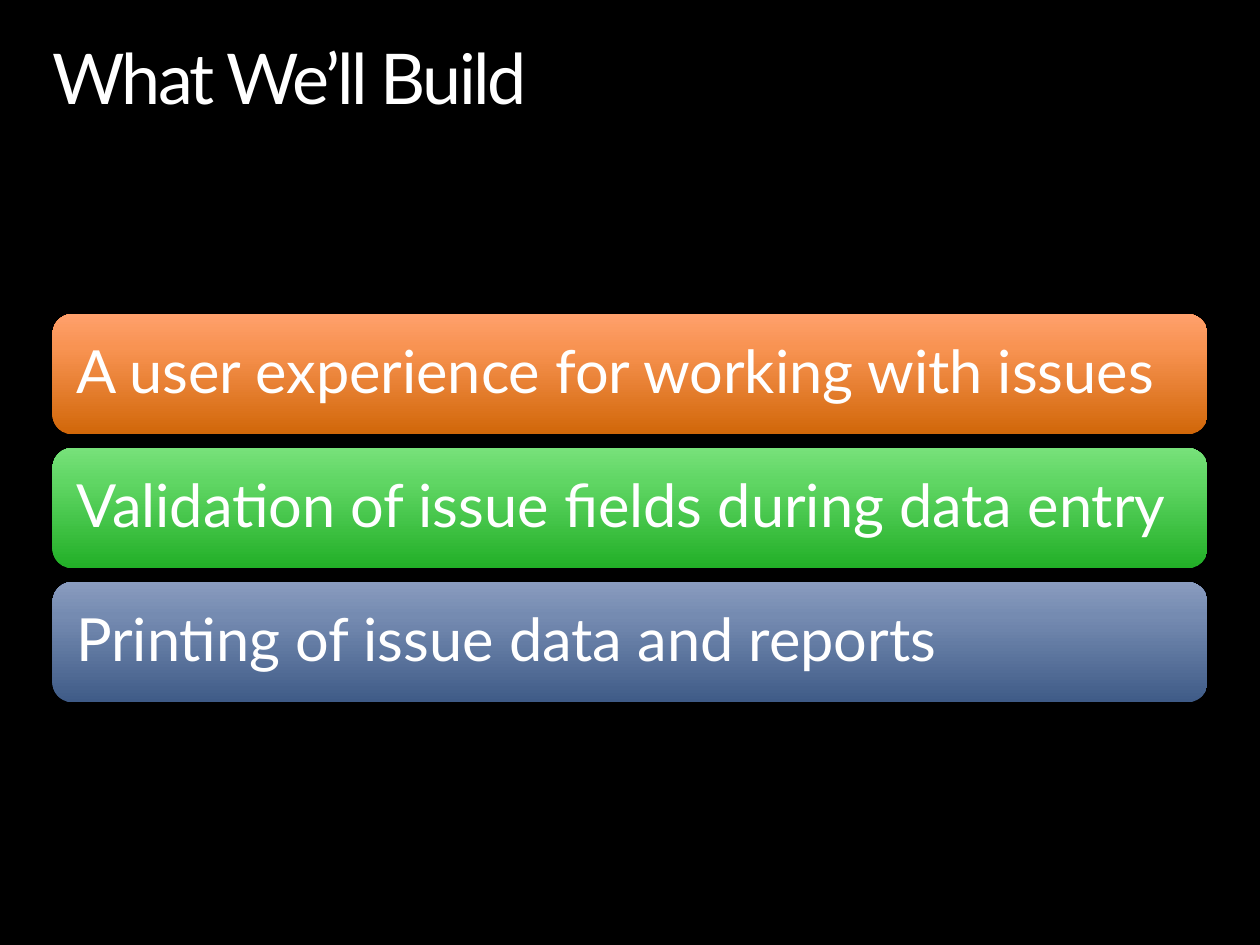
from copy import deepcopy

from pptx import Presentation
from pptx.dml.color import RGBColor
from pptx.enum.shapes import MSO_SHAPE
from pptx.enum.text import MSO_ANCHOR, PP_ALIGN
from pptx.oxml.ns import qn
from pptx.util import Pt

FONT = "Lato"
WHITE = "FFFFFF"
STOP_POSITIONS = (0, 0.72, 1)
GOALS = [
    ("A user experience for working with issues", ("D16709", "F89352", "FFA06C")),
    ("Validation of issue fields during data entry", ("22AF27", "60D664", "77E17A")),
    ("Printing of issue data and reports", ("3F5B87", "758BB1", "8A9CBF")),
]


def color(hex_value):
    """Return the colour for a hex string."""
    return RGBColor.from_string(hex_value)


def write_line(frame, wording, size, inset, anchor):
    """Write one left-aligned white line into a frame and return its run."""
    frame.word_wrap = True
    frame.vertical_anchor = anchor
    frame.margin_left = frame.margin_right = Pt(inset)
    frame.margin_top = frame.margin_bottom = Pt(inset)
    line = frame.paragraphs[0]
    line.alignment = PP_ALIGN.LEFT
    line.line_spacing = 0.9
    run = line.add_run()
    run.text = wording
    run.font.name = FONT
    run.font.size = Pt(size)
    run.font.color.rgb = color(WHITE)
    return run


def fill_gradient(bar, shades):
    """Fill a bar with three shades running from bottom to top."""
    bar.fill.gradient()
    bar.fill.gradient_angle = 90
    stop_list = bar._element.spPr.find(f".//{qn('a:gsLst')}")
    stop_list.insert(1, deepcopy(stop_list[0]))
    for stop, position, shade in zip(bar.fill.gradient_stops, STOP_POSITIONS, shades):
        stop.position = position
        stop.color.rgb = color(shade)


def add_title(slide, left, top, width, height):
    """Place the slide title in the given box."""
    title = slide.shapes.add_textbox(Pt(left), Pt(top), Pt(width), Pt(height))
    run = write_line(title.text_frame, "What We’ll Build", 40, 0, MSO_ANCHOR.TOP)
    run.font._element.set("spc", "-150")


def add_goals(slide, left, top, width, height, gap=7.7):
    """Stack the goal bars evenly in the given box."""
    bar_height = (height - gap * (len(GOALS) - 1)) / len(GOALS)
    for index, (goal, shades) in enumerate(GOALS):
        bar_top = top + index * (bar_height + gap)
        bar = slide.shapes.add_shape(
            MSO_SHAPE.ROUNDED_RECTANGLE, Pt(left), Pt(bar_top), Pt(width), Pt(bar_height)
        )
        bar.shadow.inherit = False
        bar.line.fill.background()
        fill_gradient(bar, shades)
        write_line(bar.text_frame, goal, 34, 10.2, MSO_ANCHOR.MIDDLE)


def main():
    """Build the slide and save it."""
    presentation = Presentation()
    presentation.slide_width, presentation.slide_height = Pt(720), Pt(540)
    slide = presentation.slides.add_slide(presentation.slide_layouts[6])
    slide.background.fill.solid()
    slide.background.fill.fore_color.rgb = color("000000")
    add_title(slide, 30, 25, 660, 44)
    add_goals(slide, 30, 179.4, 660, 222)
    presentation.save("out.pptx")


if __name__ == "__main__":
    main()
